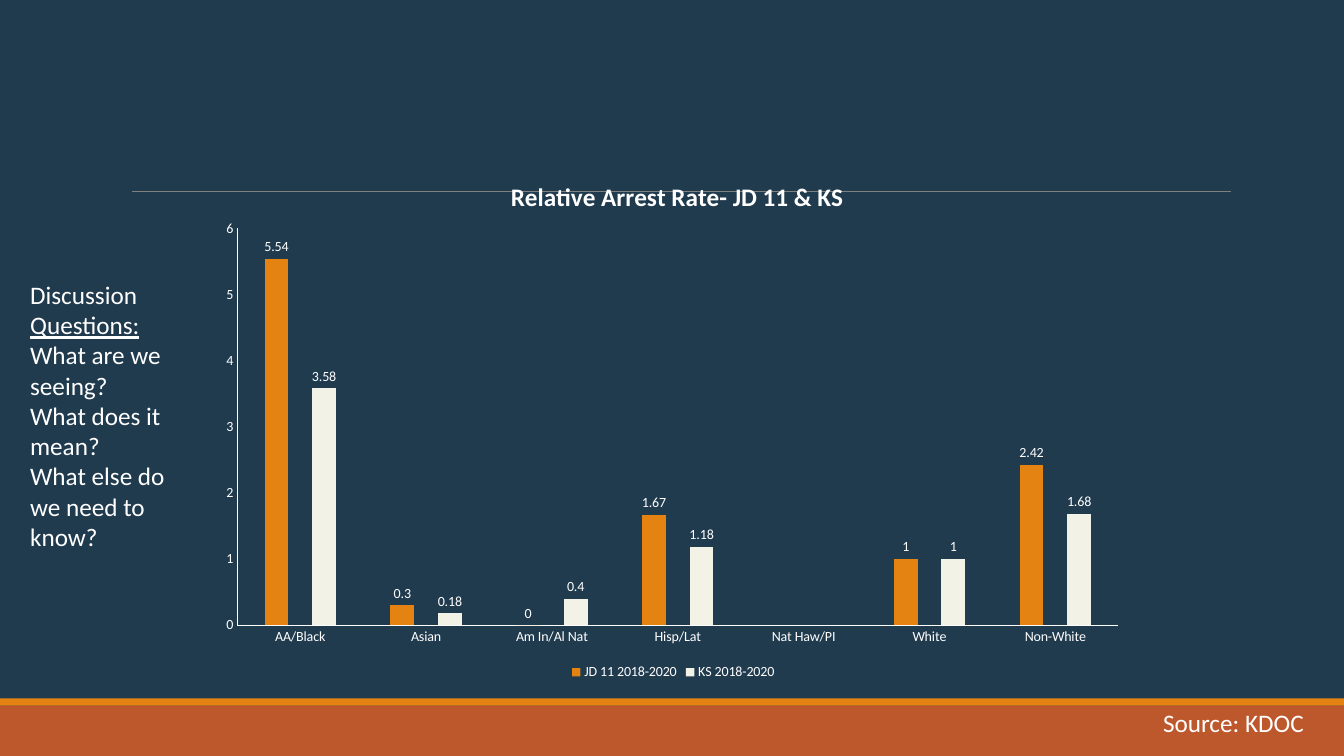
"""Build the relative arrest rate slide with its chart and discussion questions."""
from dataclasses import dataclass

from lxml.etree import SubElement
from pptx import Presentation
from pptx.chart.data import CategoryChartData
from pptx.dml.color import RGBColor
from pptx.enum.chart import XL_CHART_TYPE, XL_LABEL_POSITION, XL_LEGEND_POSITION, XL_TICK_MARK
from pptx.enum.shapes import MSO_CONNECTOR, MSO_SHAPE
from pptx.enum.text import MSO_AUTO_SIZE
from pptx.oxml import parse_xml
from pptx.oxml.ns import nsdecls, qn
from pptx.util import Cm, Pt


@dataclass(frozen=True)
class Theme:
    background: RGBColor = RGBColor.from_string("203A4E")
    footer: RGBColor = RGBColor.from_string("BD582C")
    orange: RGBColor = RGBColor.from_string("E48312")
    cream: RGBColor = RGBColor.from_string("F3F2E6")
    rule: RGBColor = RGBColor.from_string("808080")
    white: RGBColor = RGBColor.from_string("FFFFFF")
    font: str = "Calibri"
    text_size: Pt = Pt(18)
    chart_size: Pt = Pt(10)


theme = Theme()


def style_font(font, size):
    font.name = theme.font
    font.size = size
    font.color.rgb = theme.white


def set_layout(element, index, **fractions):
    for layout in element.findall(qn("c:layout")):
        element.remove(layout)
    modes = {"xMode": "edge", "yMode": "edge"}
    target = '<c:layoutTarget val="inner"/>' if "w" in fractions else ""
    settings = "".join(f'<c:{key} val="{value}"/>' for key, value in (modes | fractions).items())
    element.insert(index, parse_xml(
        f'<c:layout {nsdecls("c")}><c:manualLayout>{target}{settings}</c:manualLayout></c:layout>'))


presentation = Presentation()
presentation.slide_width = Cm(33.87)
presentation.slide_height = Cm(19.05)
slide = presentation.slides.add_slide(presentation.slide_layouts[6])
slide.background.fill.solid()
slide.background.fill.fore_color.rgb = theme.background

for top, height, color in [(17.78, 1.27, theme.footer), (17.6, 0.18, theme.orange)]:
    band = slide.shapes.add_shape(
        MSO_SHAPE.RECTANGLE, 0, Cm(top), presentation.slide_width, Cm(height))
    band.shadow.inherit = False
    band.fill.solid()
    band.fill.fore_color.rgb = color
    band.line.fill.background()

rule = slide.shapes.add_connector(MSO_CONNECTOR.STRAIGHT, Cm(3.33), Cm(4.82), Cm(31.01), Cm(4.82))
rule.line.color.rgb = theme.rule
rule.line.width = Pt(0.5)
SubElement(rule._element.spPr, qn("a:effectLst"))

chart_data = CategoryChartData()
chart_data.categories = [
    "AA/Black", "Asian", "Am In/Al Nat", "Hisp/Lat", "Nat Haw/PI", "White", "Non-White"]
chart_data.add_series("JD 11 2018-2020", [5.54, 0.3, 0, 1.67, None, 1, 2.42])
chart_data.add_series("KS 2018-2020", [3.58, 0.18, 0.4, 1.18, None, 1, 1.68])
chart = slide.shapes.add_chart(
    XL_CHART_TYPE.COLUMN_CLUSTERED, Cm(5.28), Cm(3.73), Cm(23.37), Cm(13.51), chart_data).chart
style_font(chart.font, theme.chart_size)

chart.has_title = True
title = chart.chart_title
title.text_frame.text = "Relative Arrest Rate- JD 11 & KS"
title_font = title.text_frame.paragraphs[0].runs[0].font
style_font(title_font, theme.text_size)
title_font.bold = True
set_layout(title._element, 1, x=0.32, y=0.05)
set_layout(chart._chartSpace.chart.plotArea, 0, x=0.03, y=0.15, w=0.95, h=0.74)

chart.has_legend = True
chart.legend.position = XL_LEGEND_POSITION.BOTTOM
chart.legend.include_in_layout = False

for axis, width in [(chart.category_axis, 0.75), (chart.value_axis, 0.5)]:
    axis.has_major_gridlines = False
    axis.major_tick_mark = XL_TICK_MARK.NONE
    axis.minor_tick_mark = XL_TICK_MARK.NONE
    axis.format.line.color.rgb = theme.white
    axis.format.line.width = Pt(width)
chart.value_axis.minimum_scale = 0
chart.value_axis.maximum_scale = 6
chart.value_axis.major_unit = 1

plot = chart.plots[0]
plot.gap_width = 229
plot.overlap = -100
plot.vary_by_categories = False
for series, color in zip(plot.series, [theme.orange, theme.cream]):
    series.format.fill.solid()
    series.format.fill.fore_color.rgb = color
    series.data_labels.show_value = True
    series.data_labels.position = XL_LABEL_POSITION.OUTSIDE_END

source_box = slide.shapes.add_textbox(Cm(29.06), Cm(17.7), Cm(4.11), Cm(1.02))
source_box.text_frame.text = "Source: KDOC"
source_box.text_frame.word_wrap = False

questions_box = slide.shapes.add_textbox(Cm(0.51), Cm(6.91), Cm(4.5), Cm(7.19))
questions = questions_box.text_frame
questions.word_wrap = True
questions.text = "Discussion \nWhat are we seeing?\nWhat does it mean?\nWhat else do we need to know?"
heading = questions.paragraphs[0].add_run()
heading.text = "Questions:"
heading.font.underline = True

for box in (source_box, questions_box):
    box.text_frame.auto_size = MSO_AUTO_SIZE.SHAPE_TO_FIT_TEXT
    for paragraph in box.text_frame.paragraphs:
        for run in paragraph.runs:
            style_font(run.font, theme.text_size)

presentation.save("out.pptx")
